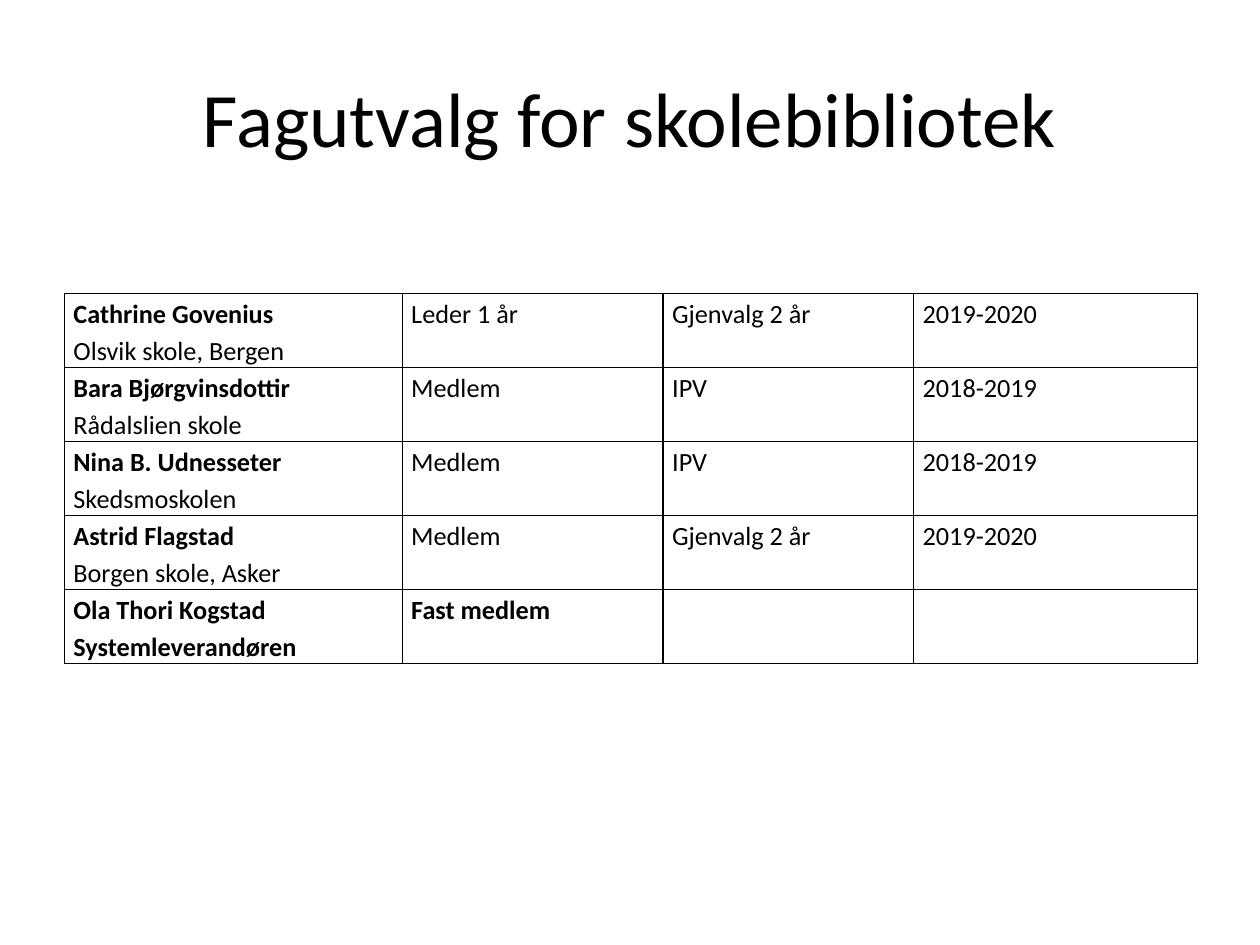
import copy

import lxml.etree
import pptx
import pptx.dml.color
import pptx.enum.text
import pptx.oxml.ns
import pptx.util

Cm, Pt = pptx.util.Cm, pptx.util.Pt
qn = pptx.oxml.ns.qn

TITLE = "Fagutvalg for skolebibliotek"
# Name, school or firm, whether the second line is bold, then the other columns
MEMBERS = [
    ("Cathrine Govenius", "Olsvik skole, Bergen", False, "Leder 1 år", "Gjenvalg 2 år", "2019-2020"),
    ("Bara Bjørgvinsdottir", "Rådalslien skole", False, "Medlem", "IPV", "2018-2019"),
    ("Nina B. Udnesseter", "Skedsmoskolen", False, "Medlem", "IPV", "2018-2019"),
    ("Astrid Flagstad", "Borgen skole, Asker", False, "Medlem", "Gjenvalg 2 år", "2019-2020"),
    ("Ola Thori Kogstad", "Systemleverandøren", True, "Fast medlem", "", ""),
]
COLORS = {"text": "000000", "border": "000000", "cell": "FFFFFF"}
FONT = "Calibri"
COLUMN_WIDTHS = [6.81, 5.26, 5.05, 5.72]
ROW_HEIGHT = 1.42


def add_text(p, text, size=15, bold=False, new_line=False):
    """Append a formatted run, optionally after a line break of the same format."""
    br = p._p.add_br() if new_line else None
    r = p.add_run()
    r.text = text
    r.font.name = FONT
    r.font.size = Pt(size)
    r.font.bold = bold
    r.font.color.rgb = pptx.dml.color.RGBColor.from_string(COLORS["text"])
    if br is not None:
        br.append(copy.deepcopy(r._r.rPr))


def format_cell(cell):
    cell.margin_left = cell.margin_right = Cm(0.18)
    cell.margin_top = cell.margin_bottom = 0
    tc_pr = cell._tc.get_or_add_tcPr()
    for side in ("a:lnL", "a:lnR", "a:lnT", "a:lnB"):
        line = lxml.etree.SubElement(tc_pr, qn(side), w=str(Pt(1)))
        fill = lxml.etree.SubElement(line, qn("a:solidFill"))
        lxml.etree.SubElement(fill, qn("a:srgbClr"), val=COLORS["border"])
    cell.fill.solid()
    cell.fill.fore_color.rgb = pptx.dml.color.RGBColor.from_string(COLORS["cell"])


def add_title(s):
    title = s.shapes.title
    title.left, title.top, title.width, title.height = Cm(1.27), Cm(0.76), Cm(22.86), Cm(3.18)
    tf = title.text_frame
    tf.vertical_anchor = pptx.enum.text.MSO_ANCHOR.MIDDLE
    p = tf.paragraphs[0]
    p.alignment = pptx.enum.text.PP_ALIGN.CENTER
    add_text(p, TITLE, size=44)


def add_member_table(s):
    table = s.shapes.add_table(
        len(MEMBERS), len(COLUMN_WIDTHS), Cm(1.3), Cm(5.92),
        Cm(sum(COLUMN_WIDTHS)), Cm(ROW_HEIGHT * len(MEMBERS))).table
    table.first_row = table.horz_banding = False
    for column, width in zip(table.columns, COLUMN_WIDTHS):
        column.width = Cm(width)
    for i, (name, place, bold, *details) in enumerate(MEMBERS):
        for j, text in enumerate([name, *details]):
            cell = table.cell(i, j)
            format_cell(cell)
            p = cell.text_frame.paragraphs[0]
            p.line_spacing = 1.15
            if text:
                add_text(p, text, bold=bold or j == 0)
            if j == 0:
                add_text(p, place, bold=bold, new_line=True)


def main():
    prs = pptx.Presentation()
    prs.slide_width, prs.slide_height = Cm(25.4), Cm(19.05)
    s = prs.slides.add_slide(prs.slide_layouts[5])
    add_title(s)
    add_member_table(s)
    prs.save("out.pptx")


if __name__ == "__main__":
    main()
